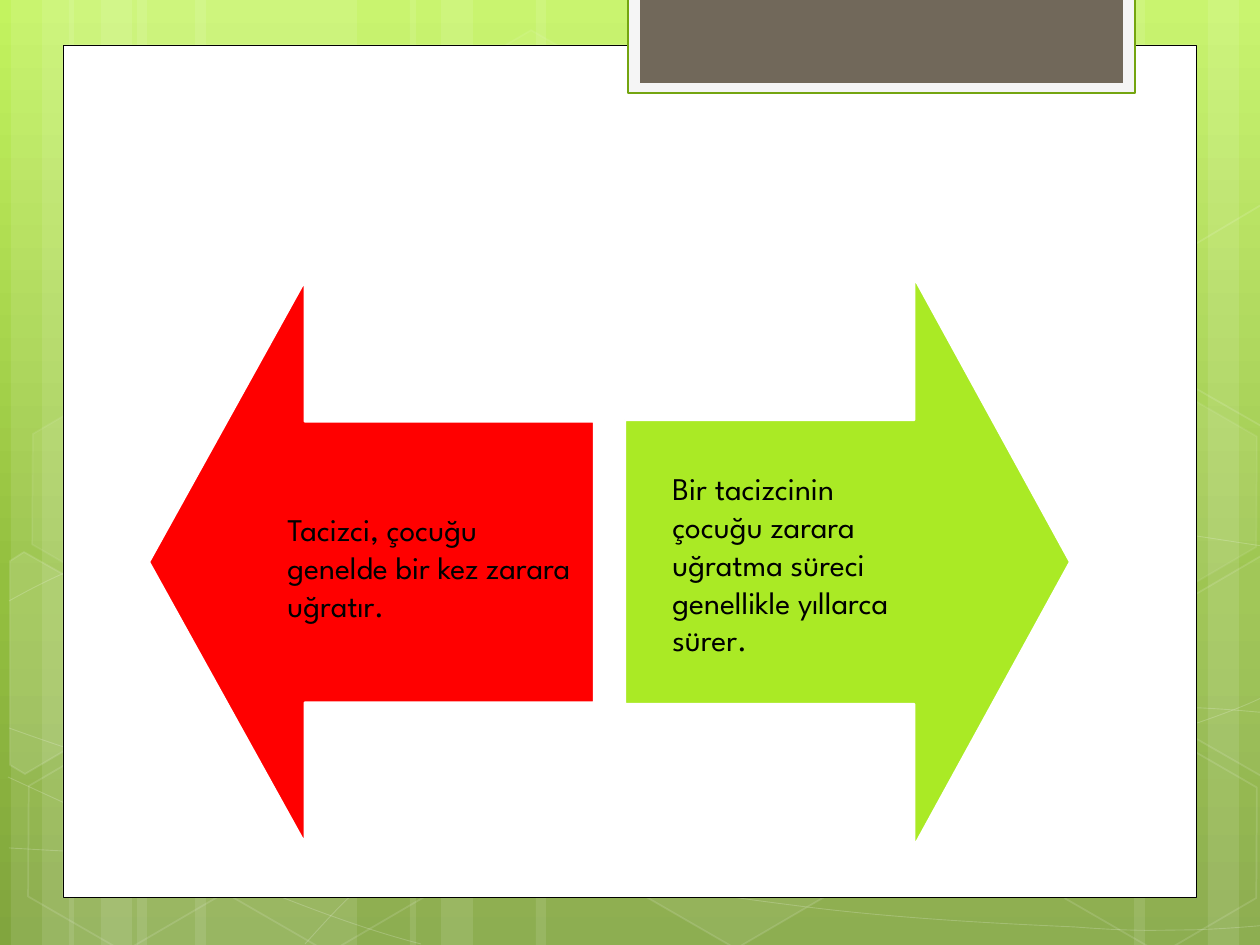
from copy import deepcopy

from lxml.etree import SubElement
from pptx import Presentation
from pptx.dml.color import RGBColor
from pptx.enum.shapes import MSO_SHAPE as Shape
from pptx.enum.text import MSO_ANCHOR, MSO_AUTO_SIZE, PP_ALIGN
from pptx.oxml.ns import qn
from pptx.util import Emu, Pt

PX = 914400 / 126
WIDTH, HEIGHT = 1260, 945
FONT = "League Spartan"
WHITE, BLACK = "FFFFFF", "000000"

STRIPES = [(137, 220), (11, 63), (42, 105), (195, 221), (69, 63), (101, 105),
           (924, 221), (1208, 63), (1134, 105), (536, 388), (410, 63), (441, 105)]

# Each wave: a start point, then Bezier segments of two controls and an end
WAVES = [
    ((9, 848), [(77, 852, 145, 856, 239, 854), (334, 853, 451, 850, 577, 838),
                (703, 825, 882, 801, 998, 777), (1113, 753, 1231, 715, 1269, 694)]),
    ((9, 601), [(45, 581, 82, 562, 152, 543), (224, 521, 326, 496, 437, 488),
                (549, 479, 685, 478, 824, 488), (963, 498, 1193, 536, 1269, 547)]),
    ((8, 777), [(160, 847, 311, 916, 421, 944)]),
    ((9, 728), [(48, 742, 88, 756, 161, 776), (234, 795, 344, 827, 450, 848),
                (554, 869, 687, 892, 791, 905), (896, 919, 1008, 924, 1075, 927),
                (1140, 932, 1158, 930, 1191, 930), (1223, 929, 1246, 927, 1269, 925)]),
    ((305, 944), [(328, 919, 350, 893, 381, 871), (411, 848, 454, 823, 489, 805),
                  (524, 788, 546, 779, 592, 767), (638, 755, 722, 737, 766, 728),
                  (811, 719, 818, 719, 857, 717), (896, 713, 958, 709, 1000, 708),
                  (1045, 707, 1116, 708, 1116, 708), (1144, 708, 1173, 708, 1201, 708),
                  (1223, 709, 1245, 711, 1256, 712), (1268, 713, 1264, 712, 1268, 713)]),
]

# left, top, fill opacity, line opacity (percent)
HEXAGONS = [(421, 45, 4, 8), (626, 742, 6, 12), (14, 745, 0, 12), (18, 393, 7, 8),
            (219, 746, 0, 12), (949, 571, 10, 12), (1051, 747, 0, 12), (1051, 396, 7, 8)]

# Hexagons cut by the slide edge: points, fill opacity
CUT_HEXAGONS = [
    ([(10, 561), (24, 552), (121, 607), (120, 718), (25, 774), (10, 765)], 10),
    ([(1167, 611), (1261, 556), (1271, 562), (1271, 772), (1263, 777), (1167, 722)], 4),
    ([(1167, 261), (1261, 205), (1273, 212), (1271, 422), (1263, 427), (1167, 372)], 0),
]


def px(value):
    return Emu(round(value * PX))


def rgb(hex_code):
    return RGBColor.from_string(hex_code)


def set_opacity(parent, percent):
    if percent < 100:
        color = parent.find(f"{qn('a:solidFill')}/{qn('a:srgbClr')}")
        SubElement(color, qn("a:alpha"), val=str(percent * 1000))


def paint(shape, fill=None, line=None, weight=1, fill_opacity=100, line_opacity=100):
    shape.shadow.inherit = False
    properties = shape.element.spPr
    if fill and fill_opacity:
        shape.fill.solid()
        shape.fill.fore_color.rgb = rgb(fill)
        set_opacity(properties, fill_opacity)
    else:
        shape.fill.background()
    if line:
        shape.line.color.rgb = rgb(line)
        shape.line.width = Pt(weight)
        set_opacity(properties.find(qn("a:ln")), line_opacity)
    else:
        shape.line.fill.background()


def add_preset(slide, kind, box, rotation=0, adjustments=(), **style):
    shape = slide.shapes.add_shape(kind, *map(px, box))
    shape.rotation = rotation
    for index, value in enumerate(adjustments):
        shape.adjustments[index] = value
    paint(shape, **style)


def add_outline(slide, points, close, **style):
    builder = slide.shapes.build_freeform(*points[0], scale=PX)
    builder.add_line_segments(points[1:], close=close)
    outline = builder.convert_to_shape()
    paint(outline, **style)
    return outline


def bend(outline):
    """Turn each three straight segments into one cubic Bezier segment."""
    lines = list(outline.element.iter(qn("a:lnTo")))
    for first in range(0, len(lines), 3):
        curve = SubElement(lines[first].getparent(), qn("a:cubicBezTo"))
        for line in lines[first:first + 3]:
            curve.append(line[0])
            line.getparent().remove(line)


def add_text(slide, text, box, size=18, color=BLACK, font=FONT):
    label = slide.shapes.add_textbox(*map(px, box))
    frame = label.text_frame
    frame.word_wrap = True
    frame.auto_size = MSO_AUTO_SIZE.SHAPE_TO_FIT_TEXT
    frame.vertical_anchor = MSO_ANCHOR.TOP
    paragraph = frame.paragraphs[0]
    paragraph.alignment = PP_ALIGN.LEFT
    run = paragraph.add_run()
    run.text = text
    run.font.size, run.font.name = Pt(size), font
    run.font.color.rgb = rgb(color)
    # Pair kerning from 12 pt upwards
    paragraph.runs[0].font.language_id = None
    label.element.find(f".//{qn('a:rPr')}").set("kern", "1200")


def set_background(slide):
    fill = slide.background.fill
    fill.gradient()
    fill.gradient_angle = 270
    stop_list = slide.element.find(f".//{qn('a:gsLst')}")
    stop_list.append(deepcopy(stop_list[-1]))
    colors = [(0, "C3F35F"), (0.62, "93BF3F"), (1, "81A53E")]
    for stop, (position, color) in zip(fill.gradient_stops, colors):
        stop.position = position
        stop.color.rgb = rgb(color)


def draw_backdrop(slide, box):
    left, top, _, height = box
    for x, width in STRIPES:
        add_preset(slide, Shape.RECTANGLE, (left + x, top, width, height),
                   fill=WHITE, fill_opacity=10)
    for start, segments in WAVES:
        knots = [start] + [part[i:i + 2] for part in segments for i in (0, 2, 4)]
        points = [(left + x, top + y) for x, y in knots]
        bend(add_outline(slide, points, False, line=WHITE, weight=0.5, line_opacity=20))
    for x, y, fill_opacity, line_opacity in HEXAGONS:
        add_preset(slide, Shape.HEXAGON, (left + x, top + y, 220, 192), rotation=30,
                   adjustments=(0.285, 1.155), fill=WHITE, line=WHITE,
                   fill_opacity=fill_opacity, line_opacity=line_opacity)
    for corners, opacity in CUT_HEXAGONS:
        points = [(left + x, top + y) for x, y in corners]
        add_outline(slide, points, True, fill=WHITE, line=WHITE,
                    fill_opacity=opacity, line_opacity=12)


def draw_panel(slide, box):
    """Draw the white content panel and the tab hanging over its top edge."""
    left, top, _, _ = box
    add_preset(slide, Shape.RECTANGLE, box, fill=WHITE, line=BLACK, weight=0.5)
    add_preset(slide, Shape.RECTANGLE, (left + 565, top - 48, 507, 96),
               fill="F5F5F5", line="74A510", weight=1.25)
    add_preset(slide, Shape.RECTANGLE, (left + 577, top - 48, 483, 86), fill="71685A")


def draw_arrow(slide, box, rotation, color, text, text_box):
    """Fill box with an arrow turned sideways; text_box is relative to box."""
    left, top, width, height = box
    # The preset points up, so its unturned frame swaps the sides about the centre
    frame = (left + (width - height) / 2, top + (height - width) / 2, height, width)
    add_preset(slide, Shape.UP_ARROW, frame, rotation, (0.5, 0.35),
               fill=color, line=WHITE, weight=1.25)
    x, y, text_width, text_height = text_box
    add_text(slide, text, (left + x, top + y, text_width, text_height))


def main():
    deck = Presentation()
    deck.slide_width, deck.slide_height = px(WIDTH), px(HEIGHT)
    slide = deck.slides.add_slide(deck.slide_layouts[6])
    set_background(slide)
    draw_backdrop(slide, (0, 0, WIDTH, HEIGHT))
    draw_panel(slide, (63, 45, 1134, 853))
    draw_arrow(slide, (149, 281, 445, 562), 270, "FF0000",
               "Tacizci, çocuğu genelde bir kez zarara uğratır.", (126, 223, 308, 127))
    draw_arrow(slide, (625, 278, 445, 568), 90, "AAEA25",
               "Bir tacizcinin çocuğu zarara uğratma süreci genellikle yıllarca sürer.",
               (35, 185, 268, 204))
    deck.save("out.pptx")


if __name__ == "__main__":
    main()
